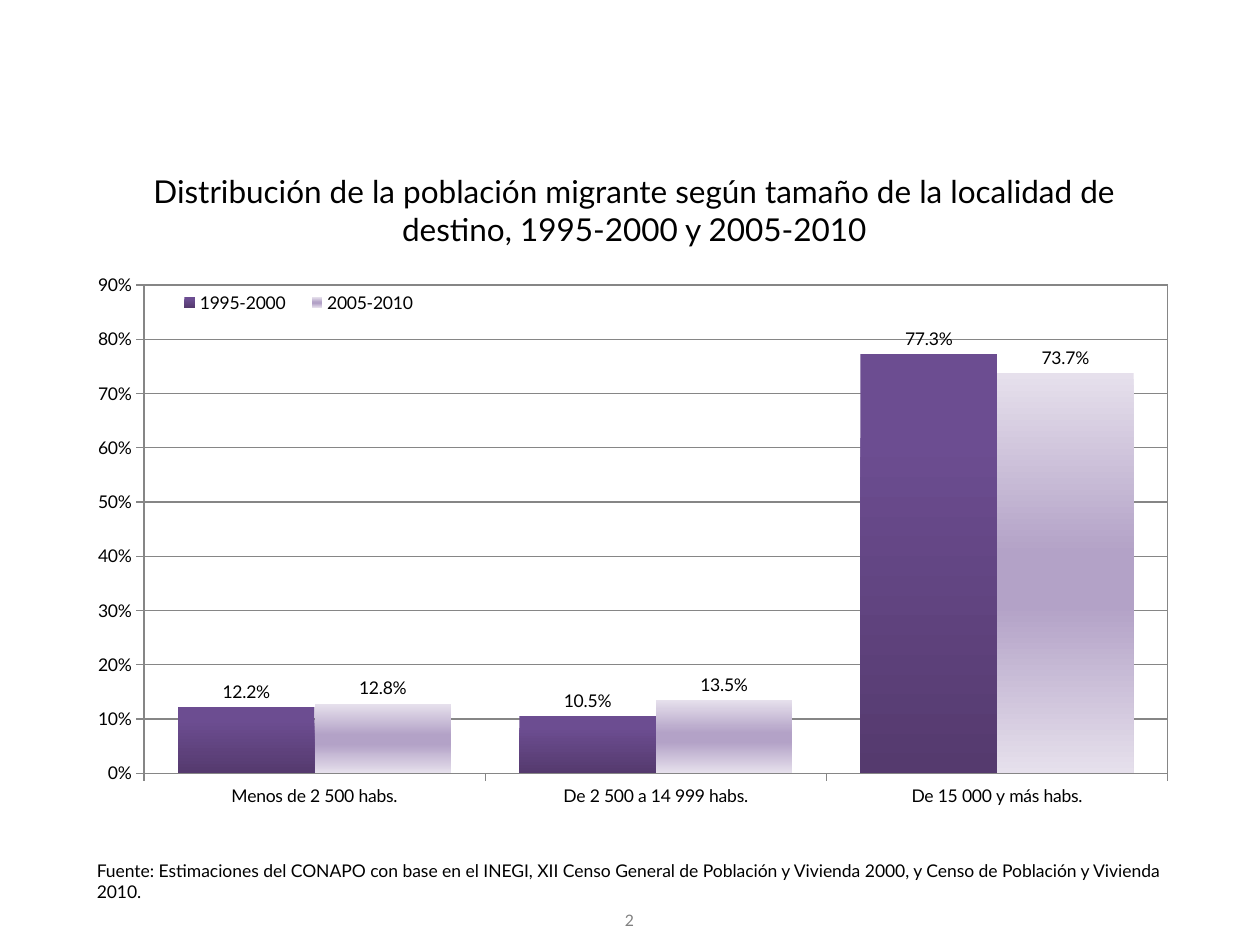
import pptx
import pptx.chart.data
import pptx.dml.color
import pptx.enum.chart
import pptx.enum.text
import pptx.oxml
import pptx.oxml.ns
import pptx.util

Inches = pptx.util.Inches
Pt = pptx.util.Pt
RGBColor = pptx.dml.color.RGBColor
qn = pptx.oxml.ns.qn
ALIGN = pptx.enum.text.PP_ALIGN
XL = pptx.enum.chart

FONT = "Lato"
BLACK = RGBColor(0x00, 0x00, 0x00)
GRAY = RGBColor(0x80, 0x80, 0x80)
LINE = RGBColor(0x86, 0x86, 0x86)
DEEP = RGBColor(0x55, 0x3A, 0x6E)
PURPLE = RGBColor(0x6C, 0x4D, 0x91)
LILAC = RGBColor(0xB3, 0xA2, 0xC7)
PALE = RGBColor(0xE6, 0xE0, 0xEC)

GROUPS = ["Menos de 2 500 habs.", "De 2 500 a 14 999 habs.", "De 15 000 y más habs."]
SERIES = [
    ("1995-2000", (0.122, 0.105, 0.773), [(0, PURPLE), (20, PURPLE), (100, DEEP)]),
    ("2005-2010", (0.128, 0.135, 0.737), [(0, PALE), (45, LILAC), (58, LILAC), (100, PALE)]),
]


def place(shape, box):
    """Move a shape to a box of left, top, width and height in inches."""
    shape.left, shape.top, shape.width, shape.height = map(Inches, box)


def write(shape, text, size, color=BLACK, align=ALIGN.LEFT):
    """Put one formatted paragraph in a shape, centred in height."""
    frame = shape.text_frame
    frame.word_wrap = True
    frame.auto_size = pptx.enum.text.MSO_AUTO_SIZE.NONE
    frame.vertical_anchor = pptx.enum.text.MSO_ANCHOR.MIDDLE
    frame.text = text
    para = frame.paragraphs[0]
    para.alignment = align
    style(para.font, size, color)


def style(font, size, color=BLACK):
    """Set the face, size and colour of a font."""
    font.name = FONT
    font.size = Pt(size)
    font.bold = False
    font.color.rgb = color


def title(slide, box):
    """Fill the title placeholder."""
    place(slide.shapes.title, box)
    write(slide.shapes.title, "Distribución de la población migrante según tamaño de la "
          "localidad de destino, 1995-2000 y 2005-2010", 18, align=ALIGN.CENTER)


def note(slide, box, text, size, **look):
    """Add a text box."""
    write(slide.shapes.add_textbox(*map(Inches, box)), text, size, **look)


def layout(parent, index, box, inner=False):
    """Give a chart part a manual place as fractions of the chart."""
    for old in parent.findall(qn("c:layout")):
        parent.remove(old)
    target = '<c:layoutTarget val="inner"/>' if inner else ""
    modes = "".join(f'<c:{key}Mode val="edge"/>' for key in "xy")
    sizes = "".join(f'<c:{key} val="{val}"/>' for key, val in zip("xywh", box))
    parent.insert(index, pptx.oxml.parse_xml(
        f'<c:layout {pptx.oxml.ns.nsdecls("c")}><c:manualLayout>'
        f'{target}{modes}{sizes}</c:manualLayout></c:layout>'))


def blend(series, stops):
    """Fill a series with a gradient that runs from top to bottom."""
    series.format.fill.solid()
    solid = series._element.find(qn("c:spPr")).find(qn("a:solidFill"))
    marks = "".join(f'<a:gs pos="{pos * 1000}"><a:srgbClr val="{color}"/></a:gs>'
                    for pos, color in stops)
    solid.getparent().replace(solid, pptx.oxml.parse_xml(
        f'<a:gradFill {pptx.oxml.ns.nsdecls("a")} rotWithShape="1"><a:gsLst>{marks}</a:gsLst>'
        '<a:lin ang="5400000" scaled="0"/></a:gradFill>'))


def trim(axis):
    """Set the ticks, line and font of an axis."""
    axis.major_tick_mark = XL.XL_TICK_MARK.OUTSIDE
    axis.minor_tick_mark = XL.XL_TICK_MARK.NONE
    axis.format.line.color.rgb = LINE
    style(axis.tick_labels.font, 10)


def bars(slide, box):
    """Add the clustered column chart."""
    data = pptx.chart.data.CategoryChartData(number_format="0.0%")
    data.categories = GROUPS
    for name, vals, _ in SERIES:
        data.add_series(name, vals)
    chart = slide.shapes.add_chart(
        XL.XL_CHART_TYPE.COLUMN_CLUSTERED, *map(Inches, box), data).chart
    chart.has_title = False
    style(chart.font, 10)

    plot = chart.plots[0]
    plot.gap_width, plot.overlap, plot.vary_by_categories = 50, 0, False
    for series, (_, _, stops) in zip(plot.series, SERIES):
        blend(series, stops)
        labels = series.data_labels
        labels.show_value = True
        labels.number_format, labels.number_format_is_linked = "0.0%", False
        labels.position = XL.XL_LABEL_POSITION.OUTSIDE_END
        style(labels.font, 10)

    trim(chart.category_axis)
    axis = chart.value_axis
    trim(axis)
    axis.minimum_scale, axis.maximum_scale, axis.major_unit = 0, 0.9, 0.1
    axis.tick_labels.number_format = "0%"
    axis.tick_labels.number_format_is_linked = False
    axis.major_gridlines.format.line.color.rgb = LINE

    area = chart._chartSpace.chart.plotArea
    layout(area, 0, (0.062, 0.054, 0.913, 0.863), inner=True)
    area.append(pptx.oxml.parse_xml(
        f'<c:spPr {pptx.oxml.ns.nsdecls("c", "a")}><a:noFill/><a:ln w="9525"><a:solidFill>'
        f'<a:srgbClr val="{LINE}"/></a:solidFill></a:ln></c:spPr>'))

    chart.has_legend = True
    legend = chart.legend
    legend.position = XL.XL_LEGEND_POSITION.BOTTOM
    legend.include_in_layout = False
    style(legend.font, 10)
    layout(legend._element, 1, (0.08, 0.06, 0.24, 0.05))


def main():
    """Build and save the slide."""
    deck = pptx.Presentation()
    deck.slide_width, deck.slide_height = Inches(10), Inches(7.5)
    slide = deck.slides.add_slide(deck.slide_layouts[5])
    bars(slide, (0.59, 2.02, 8.9, 4.49))
    title(slide, (1.06, 1.31, 7.95, 0.71))
    note(slide, (0.67, 6.82, 8.66, 0.35),
         "Fuente: Estimaciones del CONAPO con base en el INEGI, XII Censo General de "
         "Población y Vivienda 2000, y Censo de Población y Vivienda 2010.", 10)
    note(slide, (4.45, 7.17, 1.09, 0.27), "2", 9, color=GRAY, align=ALIGN.CENTER)
    deck.save("out.pptx")


if __name__ == "__main__":
    main()
